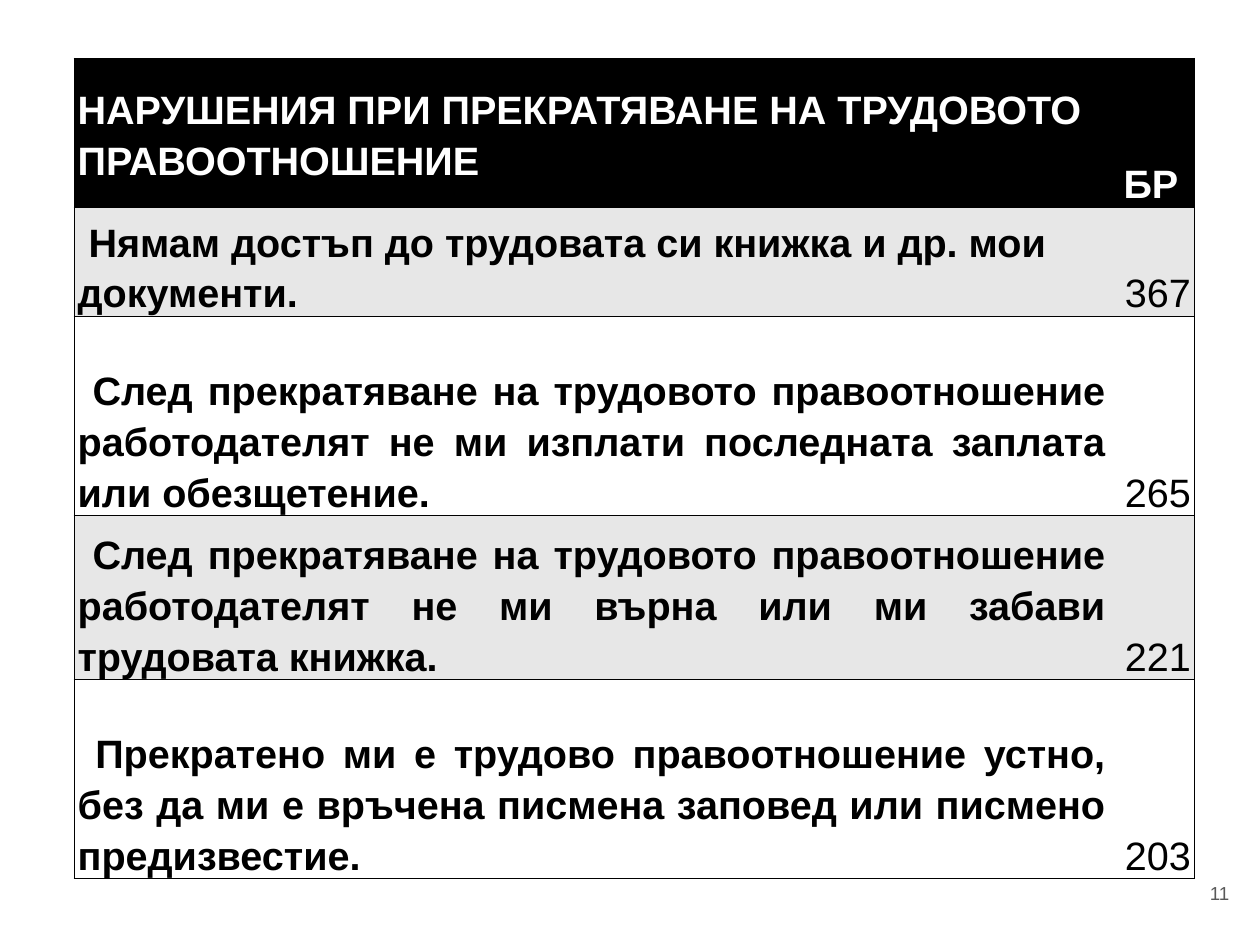
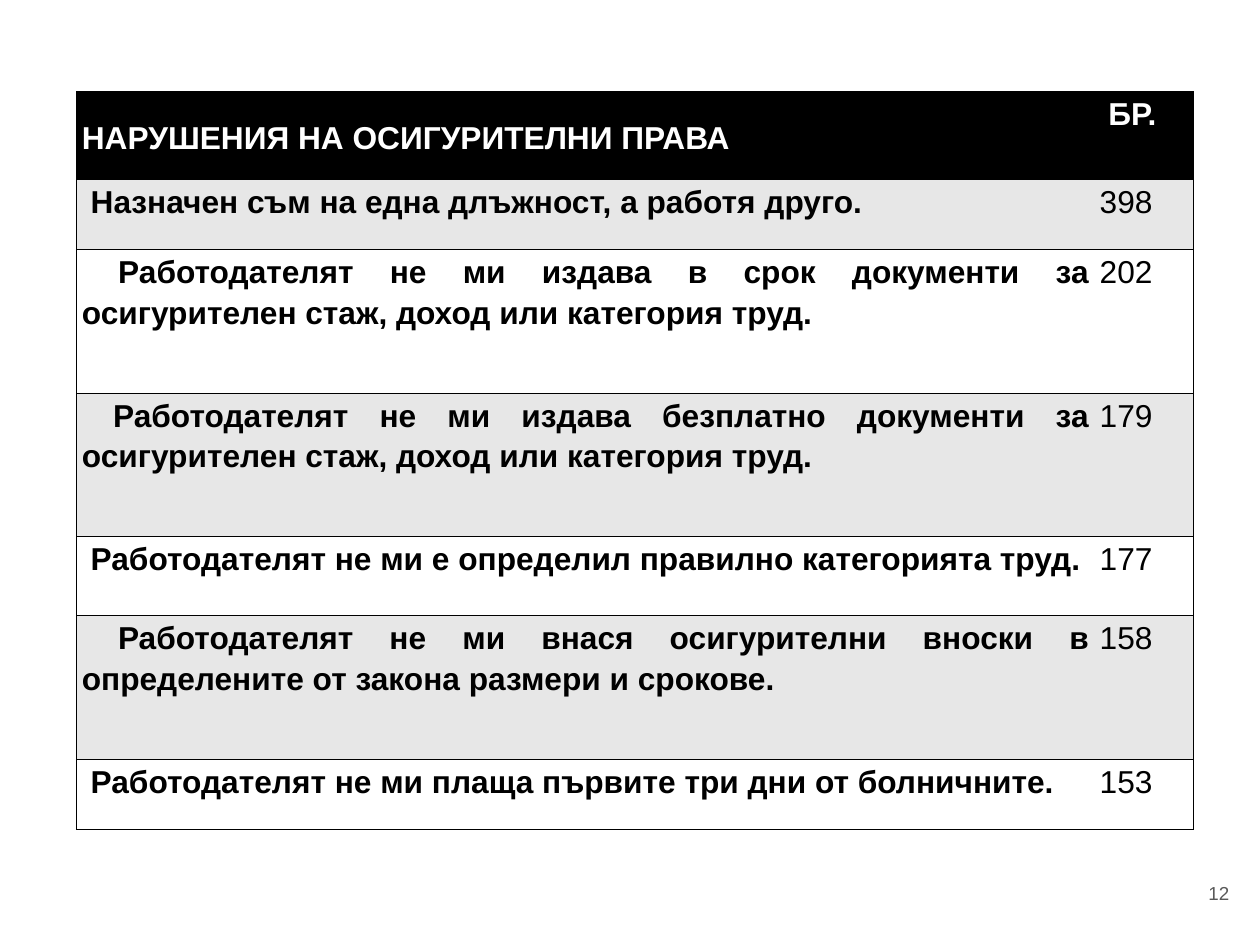
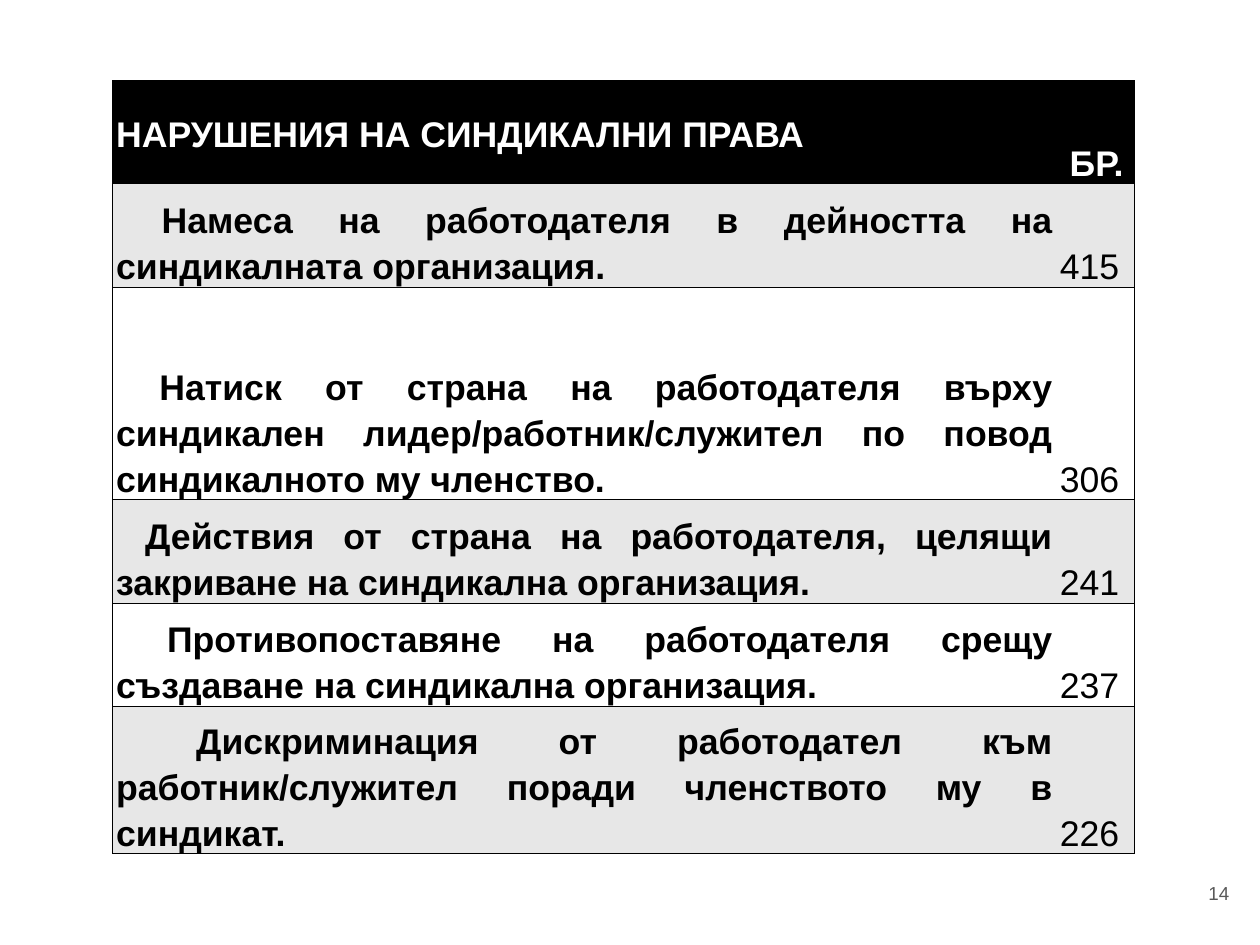
from pptx import Presentation
from pptx import util as u
from pptx.dml.color import RGBColor
from pptx.enum import text
from pptx.oxml import parse_xml
from pptx.oxml.ns import nsdecls

PX = 9144
FONT = "Arial"
COLORS = {"ink": "000000", "paper": "FFFFFF", "band": "E7E7E7", "page": "595959"}
ALIGN = text.PP_ALIGN
ANCHOR = text.MSO_ANCHOR

TABLES = [
    {
        "page": "11", "left": 104, "top": 82, "cols": (1453, 120),
        "size": 40, "inset": 5, "anchor": ANCHOR.BOTTOM,
        "count": ALIGN.RIGHT, "ragged": 2,
        "rows": [
            (209, "НАРУШЕНИЯ ПРИ ПРЕКРАТЯВАНЕ НА ТРУДОВОТО ПРАВООТНОШЕНИЕ", " БР"),
            (138, " Нямам достъп до трудовата си книжка и др. мои документи.", "367"),
            (280, " След прекратяване на трудовото правоотношение работодателят не ми изплати последната заплата или обезщетение.", "265"),
            (209, " След прекратяване на трудовото правоотношение работодателят не ми върна или ми забави трудовата книжка.", "221"),
            (280, " Прекратено ми е трудово правоотношение устно, без да ми е връчена писмена заповед или писмено предизвестие.", "203"),
        ],
    },
    {
        "page": "12", "left": 108, "top": 129, "cols": (1429, 139),
        "size": 32, "inset": 7, "anchor": ANCHOR.TOP,
        "count": ALIGN.JUSTIFY, "ragged": 0,
        "rows": [
            (123, "НАРУШЕНИЯ НА ОСИГУРИТЕЛНИ ПРАВА", " БР."),
            (98, " Назначен съм на една длъжност, а работя друго.", "398"),
            (202, " Работодателят не ми издава в срок документи за осигурителен стаж, доход или категория труд.", "202"),
            (202, " Работодателят не ми издава безплатно документи за осигурителен стаж, доход или категория труд.", "179"),
            (110, " Работодателят не ми е определил правилно категорията труд.", "177"),
            (202, " Работодателят не ми внася осигурителни вноски в определените от закона размери и срокове.", "158"),
            (99, " Работодателят не ми плаща първите три дни от болничните.", "153"),
        ],
    },
    {
        "page": "14", "left": 158, "top": 113, "cols": (1325, 110),
        "size": 36, "inset": 5, "anchor": ANCHOR.BOTTOM,
        "count": ALIGN.JUSTIFY, "ragged": 0,
        "rows": [
            (145, "НАРУШЕНИЯ НА СИНДИКАЛНИ ПРАВА", " БР."),
            (145, " Намеса на работодателя в дейността на синдикалната организация.", "415"),
            (299, " Натиск от страна на работодателя върху синдикален лидер/работник/служител по повод синдикалното му членство.", "306"),
            (145, " Действия от страна на работодателя, целящи закриване на синдикална организация.", "241"),
            (145, " Противопоставяне на работодателя срещу създаване на синдикална организация.", "237"),
            (147, " Дискриминация от работодател към работник/служител поради членството му в синдикат.", "226"),
        ],
    },
]


def px(n):
    """Turn px into EMU."""
    return u.Emu(n * PX)


def apply(item, values):
    """Set each attribute of an item from a dict."""
    for name, value in values.items():
        setattr(item, name, value)


def write(para, words, size, color, align, bold=False, space=1.0):
    """Fill a paragraph with one formatted run."""
    apply(para, {"alignment": align, "line_spacing": space})
    run = para.add_run()
    run.text = words
    apply(run.font, {"name": FONT, "size": u.Pt(size), "bold": bold})
    run.font.color.rgb = RGBColor.from_string(COLORS[color])


def edge(cell, sides):
    """Draw the named sides of a cell and clear the others."""
    for side in "LRTB":
        fill = "<a:noFill/>"
        if side in sides:
            fill = f'<a:solidFill><a:srgbClr val="{COLORS["ink"]}"/></a:solidFill>'
        line = f'<a:ln{side} {nsdecls("a")} w="{u.Pt(1)}">{fill}</a:ln{side}>'
        cell._tc.get_or_add_tcPr().append(parse_xml(line))


def paint(cell, color):
    """Fill a cell with one colour."""
    cell.fill.solid()
    cell.fill.fore_color.rgb = RGBColor.from_string(COLORS[color])


def style(cell, data, row, col, words):
    """Format one table cell by its place in the grid."""
    head = row == 0
    if col == 0:
        align = ALIGN.LEFT if row < data["ragged"] else ALIGN.JUSTIFY
    else:
        align = ALIGN.LEFT if head else data["count"]
    inset = px(data["inset"])
    apply(cell, {
        "margin_left": inset, "margin_right": inset,
        "margin_top": 0, "margin_bottom": 0,
        "vertical_anchor": ANCHOR.MIDDLE if head and col == 0 else data["anchor"],
    })
    edge(cell, "TB" + "LR"[col])
    paint(cell, "ink" if head else ("paper", "band")[row % 2])
    write(cell.text_frame.paragraphs[0], words, data["size"],
          "paper" if head else "ink", align, head or col == 0, 1.15)


def grid(slide, data):
    """Add a table of complaints and their counts."""
    rows, cols = data["rows"], data["cols"]
    high = sum(row[0] for row in rows)
    table = slide.shapes.add_table(
        len(rows), len(cols), px(data["left"]), px(data["top"]),
        px(sum(cols)), px(high)).table
    apply(table, {"first_row": False, "horz_banding": False})
    for col, wide in zip(table.columns, cols):
        col.width = px(wide)
    for r, (tall, *words) in enumerate(rows):
        table.rows[r].height = px(tall)
        for c, word in enumerate(words):
            style(table.cell(r, c), data, r, c, word)


def number(slide, page):
    """Add the page number at the lower right."""
    frame = slide.shapes.add_textbox(px(1639), px(1203), px(106), px(102)).text_frame
    apply(frame, {"word_wrap": True, "vertical_anchor": ANCHOR.MIDDLE})
    apply(frame, {f"margin_{side}": px(19) for side in ("left", "right", "top", "bottom")})
    write(frame.paragraphs[0], page, 19, "page", ALIGN.RIGHT)


def main():
    """Build and save the deck."""
    deck = Presentation()
    apply(deck, {"slide_width": px(1769), "slide_height": px(1327)})
    for data in TABLES:
        slide = deck.slides.add_slide(deck.slide_layouts[6])
        number(slide, data["page"])
        grid(slide, data)
    deck.save("out.pptx")


if __name__ == "__main__":
    main()
